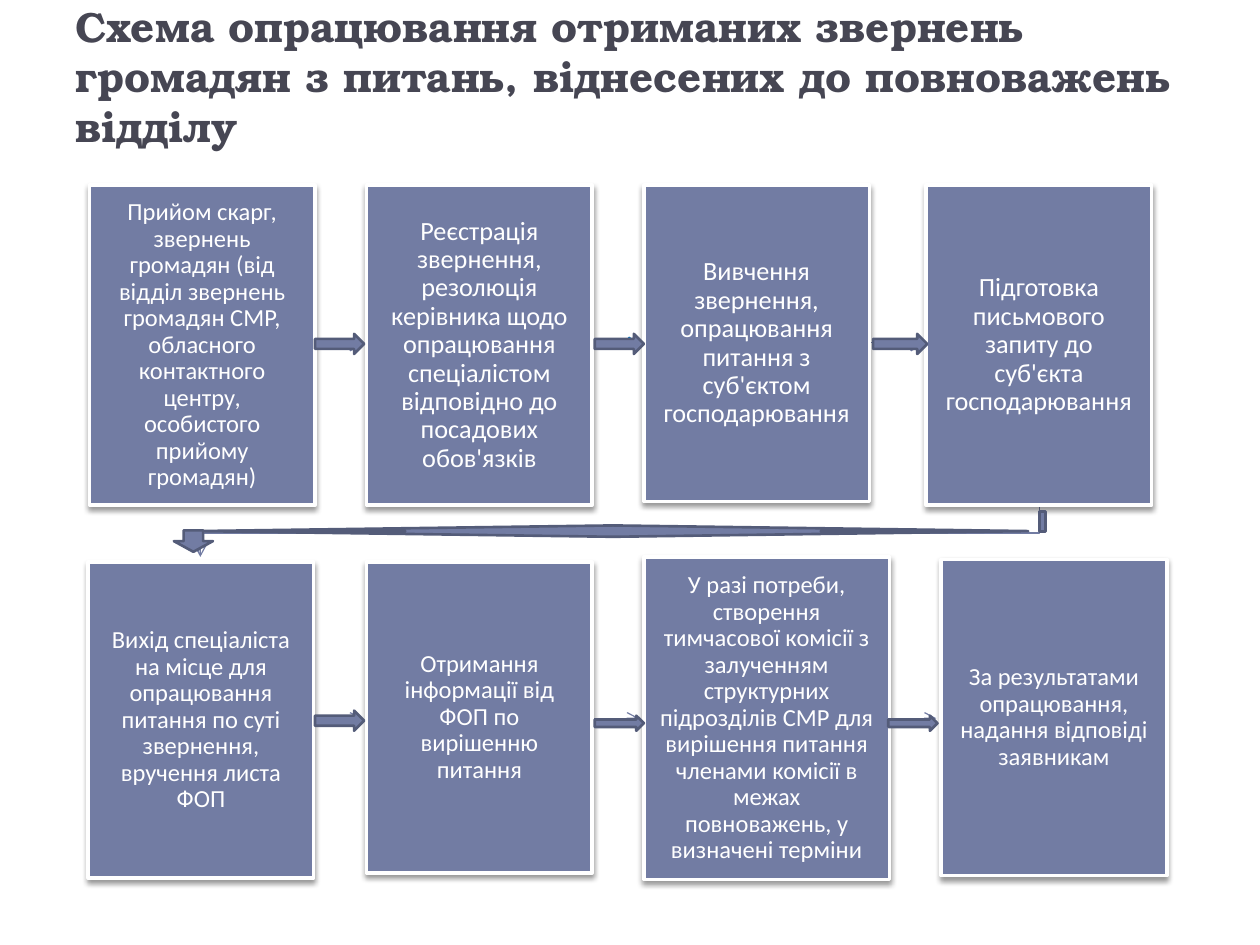
from lxml.etree import SubElement
from pptx import Presentation
from pptx.dml.color import RGBColor
from pptx.enum.shapes import MSO_CONNECTOR, MSO_SHAPE
from pptx.enum.text import MSO_ANCHOR, PP_ALIGN
from pptx.oxml.ns import qn
from pptx.util import Inches, Pt

FILL, EDGE, WHITE, INK, BLUE = "727CA3", "545C79", "FFFFFF", "464653", "0070C0"
LEFT, STEP, WIDE = 0.71, 2.2, 1.79  # column grid, in inches
ROWS = 1.47, 4.46

# Row, shift from the grid cell (x, y), width, height, text size, text
STEPS = [
    [
        (0, 0, WIDE, 2.54, 14, "Прийом скарг, звернень громадян (від відділ звернень громадян СМР, "
         "обласного контактного центру, особистого прийому громадян)"),
        (0, 0, WIDE, 2.54, 15, "Реєстрація звернення, резолюція керівника щодо опрацювання "
         "спеціалістом відповідно до посадових обов'язків"),
        (0, 0, WIDE, 2.51, 15, "Вивчення звернення, опрацювання питання з суб'єктом господарювання"),
        (0.04, 0, WIDE, 2.54, 15, "Підготовка письмового запиту до суб'єкта господарювання"),
    ],
    [
        (-0.01, 0, WIDE, 2.51, 14, "Вихід спеціаліста на місце для опрацювання питання по суті "
         "звернення, вручення листа ФОП"),
        (0, 0, WIDE, 2.47, 14, "Отримання інформації від ФОП по вирішенню питання"),
        (0, -0.04, 1.95, 2.56, 14, "У разі потреби, створення тимчасової комісії з залученням "
         "структурних підрозділів СМР для вирішення питання членами комісії в межах "
         "повноважень, у визначені терміни"),
        (0.16, -0.02, WIDE, 2.51, 14, "За результатами опрацювання, надання відповіді заявникам"),
    ],
]

# Thin links: points, colour, line width, arrowhead
LINKS = [
    ([(2.49, 2.74), (2.87, 2.74)], FILL, 0.75, "arrow"),
    ([(4.7, 2.74), (4.9, 2.74), (4.9, 2.72), (5.07, 2.72)], BLUE, 2, "arrow"),
    ([(6.89, 2.72), (7.13, 2.72), (7.13, 2.74), (7.32, 2.74)], FILL, 0.75, "arrow"),
    ([(8.25, 4), (8.25, 4.23), (1.59, 4.23), (1.59, 4.42)], FILL, 0.75, "arrow"),
    ([(2.48, 5.72), (2.7, 5.72), (2.7, 5.7), (2.87, 5.7)], FILL, 0.75, "arrow"),
    ([(4.7, 5.7), (5.07, 5.7)], FILL, 0.75, "arrow"),
    ([(7.05, 5.7), (7.43, 5.7)], FILL, 0.75, "arrow"),
]
HOOK = [(1.54, 4.38), (1.54, 4.34), (1.61, 4.34), (1.61, 4.3)], FILL, 0.75, "triangle"

# Block arrows: kind, left, top, width, height
RIGHT = MSO_SHAPE.RIGHT_ARROW
ARROWS = [
    (RIGHT, 2.5, 2.65, 0.39, 0.16),
    (RIGHT, 4.72, 2.65, 0.39, 0.16),
    (RIGHT, 6.93, 2.65, 0.43, 0.16),
    (RIGHT, 2.5, 5.64, 0.39, 0.16),
    (RIGHT, 4.72, 5.68, 0.39, 0.12),
    (RIGHT, 7.05, 5.68, 0.39, 0.12),
]
TURN = [
    (MSO_SHAPE.UP_DOWN_ARROW, 1.57, 4.17, 6.59, 0.09),
    (MSO_SHAPE.DOWN_ARROW, 1.38, 4.21, 0.31, 0.17),
    (MSO_SHAPE.RECTANGLE, 8.25, 4.06, 0.05, 0.16),
]


def paint(part, hue):
    """Give a fill or a line one solid colour."""
    part.solid()
    part.fore_color.rgb = RGBColor.from_string(hue)


def shade(shape):
    """Put a soft shadow below the shape."""
    props = shape._element.spPr
    for old in props.findall(qn("a:effectLst")):
        props.remove(old)
    drop = SubElement(SubElement(props, qn("a:effectLst")), qn("a:outerShdw"),
                      blurRad=str(Pt(3)), dist=str(Pt(2)), dir="5400000", rotWithShape="0")
    tone = SubElement(drop, qn("a:srgbClr"), val="000000")
    SubElement(tone, qn("a:alpha"), val="40000")


def block(slide, kind, x, y, w, h, edge=EDGE, thick=1.5):
    shape = slide.shapes.add_shape(kind, Inches(x), Inches(y), Inches(w), Inches(h))
    shape.shadow.inherit = False
    paint(shape.fill, FILL)
    paint(shape.line.fill, edge)
    shape.line.width = Pt(thick)
    return shape


def write(shape, text, size, face, hue, anchor, align):
    frame = shape.text_frame
    frame.word_wrap = True
    frame.vertical_anchor = anchor
    para = frame.paragraphs[0]
    para.text = text
    para.alignment = align
    font = para.font
    font.size, font.name = Pt(size), face
    paint(font.fill, hue)
    return para


def step(slide, row, col, dx, dy, w, h, size, text):
    box = block(slide, MSO_SHAPE.RECTANGLE, LEFT + col * STEP + dx, ROWS[row] + dy, w, h, WHITE, 2)
    shade(box)
    frame = box.text_frame
    gap = Inches(0.11 if size == 14 else 0.12)
    frame.margin_left = frame.margin_right = frame.margin_top = frame.margin_bottom = gap
    para = write(box, text, size, "Calibri", WHITE, MSO_ANCHOR.MIDDLE, PP_ALIGN.CENTER)
    para.line_spacing = 0.9


def link(slide, points, hue, thick, head):
    """Draw a straight connector, or an open path when there are bends."""
    spots = [(Inches(x), Inches(y)) for x, y in points]
    if len(spots) == 2:
        line = slide.shapes.add_connector(MSO_CONNECTOR.STRAIGHT, *spots[0], *spots[1])
    else:
        pen = slide.shapes.build_freeform(*spots[0])
        pen.add_line_segments(spots[1:], close=False)
        line = pen.convert_to_shape()
        line.fill.background()
    paint(line.line.fill, hue)
    line.line.width = Pt(thick)
    SubElement(line.line._get_or_add_ln(), qn("a:tailEnd"), type=head)
    SubElement(line._element.spPr, qn("a:effectLst"))


def title(slide):
    box = slide.shapes.add_textbox(Inches(0.5), Inches(0.17), Inches(9), Inches(1.08))
    para = write(box, "Схема опрацювання отриманих звернень громадян з питань, віднесених "
                 "до повноважень відділу", 24, "TeX Gyre Bonum", INK,
                 MSO_ANCHOR.BOTTOM, PP_ALIGN.LEFT)
    para.font.bold = True


def main():
    deck = Presentation()
    deck.slide_width, deck.slide_height = Inches(10), Inches(7.5)
    slide = deck.slides.add_slide(deck.slide_layouts[6])
    title(slide)

    # Links lie behind the steps
    for item in LINKS:
        link(slide, *item)
    for row, cells in enumerate(STEPS):
        for col, cell in enumerate(cells):
            step(slide, row, col, *cell)

    # Block arrows, then the turn between the rows
    for item in ARROWS:
        block(slide, *item)
    link(slide, *HOOK)
    for item in TURN:
        block(slide, *item)
    deck.save("out.pptx")


if __name__ == "__main__":
    main()
